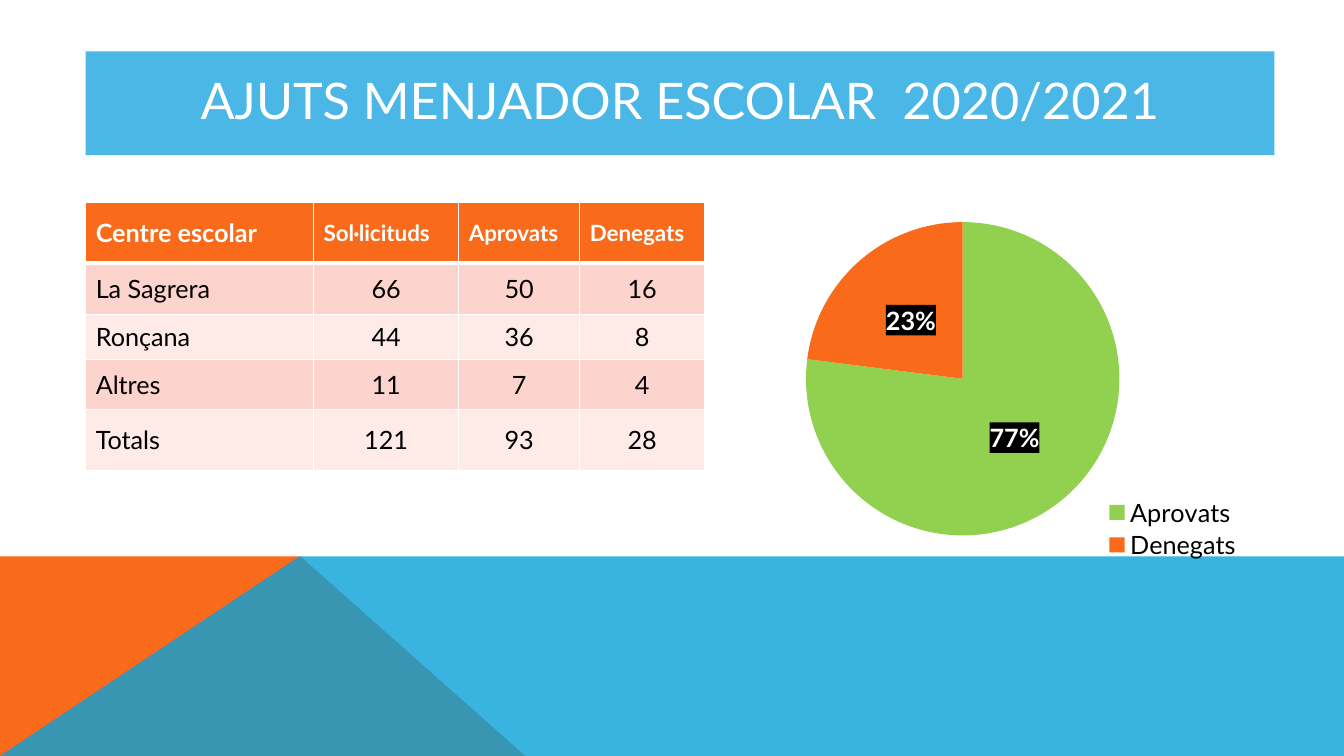
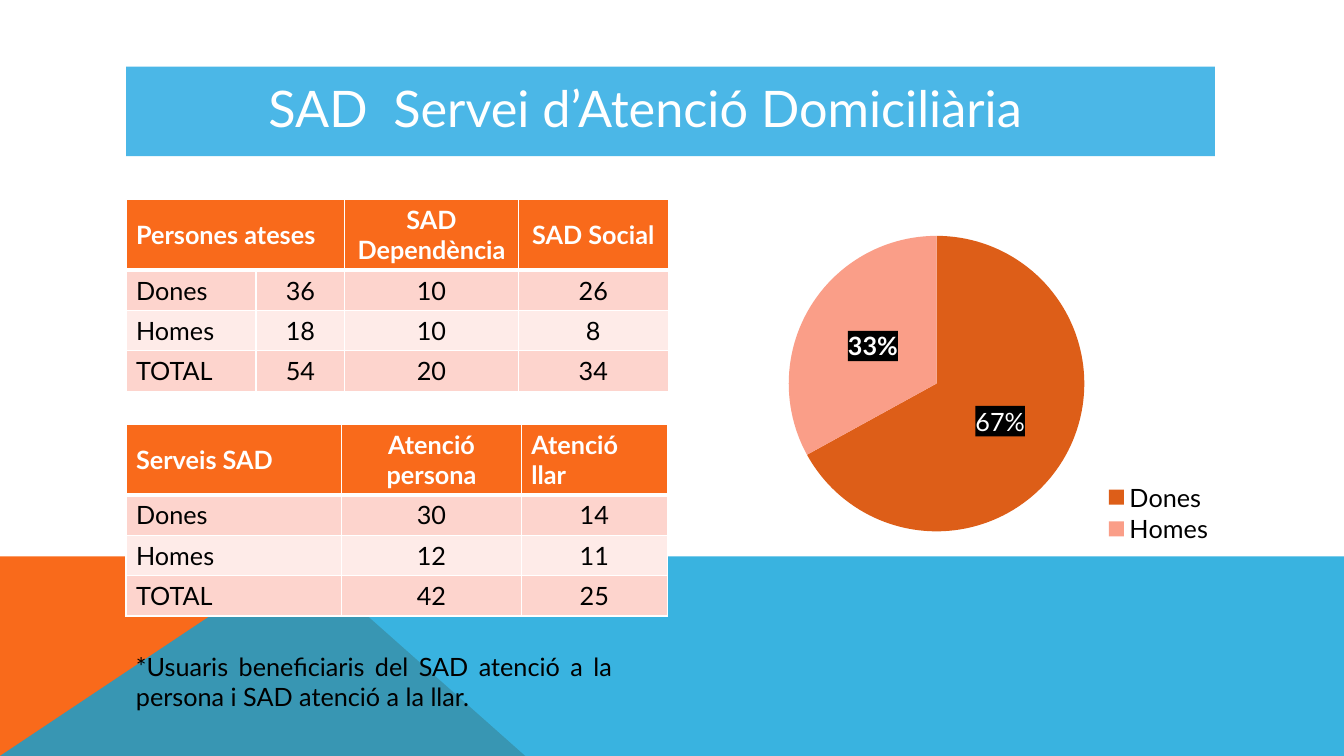
from dataclasses import dataclass

from pptx import Presentation
from pptx.chart.chart import Chart
from pptx.chart.data import CategoryChartData
from pptx.dml.color import RGBColor
from pptx.enum.chart import XL_CHART_TYPE as ChartType
from pptx.enum.chart import XL_LABEL_POSITION as LabelPosition
from pptx.enum.chart import XL_LEGEND_POSITION as LegendPosition
from pptx.enum.text import MSO_ANCHOR as Anchor
from pptx.enum.text import MSO_AUTO_SIZE as AutoSize
from pptx.enum.text import PP_ALIGN as Align
from pptx.oxml import parse_xml
from pptx.oxml.ns import nsdecls, qn
from pptx.slide import Slide
from pptx.util import Inches, Pt

WHITE = RGBColor(0xFF, 0xFF, 0xFF)
BLACK = RGBColor(0x00, 0x00, 0x00)
ORANGE = RGBColor(0xF9, 0x6A, 0x1B)
DARK_ORANGE = RGBColor(0xDD, 0x5E, 0x18)
SALMON = RGBColor(0xFA, 0x9E, 0x88)
GREEN = RGBColor(0x92, 0xD0, 0x50)
BLUE = RGBColor(0x08, 0xA1, 0xD9)
TITLE_BLUE = RGBColor(0x4B, 0xB7, 0xE7)
ROW_TINTS = (RGBColor(0xFD, 0xD4, 0xCD), RGBColor(0xFE, 0xEB, 0xE8))

FONT = "Lato"
BODY_SIZE = 18
WIDTH, HEIGHT = 13.33, 7.5
BAND_TOP = 5.52

Box = tuple[float, float, float, float]


@dataclass(frozen=True)
class Band:
    points: tuple[tuple[float, float], ...]
    color: RGBColor
    opacity: int = 100


@dataclass(frozen=True)
class Column:
    width: float
    title: str = ""  # an untitled column joins the header on its left
    align: Align = Align.CENTER
    size: int = BODY_SIZE


@dataclass(frozen=True)
class TableSpec:
    left: float
    top: float
    columns: tuple[Column, ...]
    heights: tuple[float, ...]
    rows: tuple[tuple[str, ...], ...]


@dataclass(frozen=True)
class PieSpec:
    box: Box
    plot: Box
    legend: Box
    shares: dict[str, int]
    colors: tuple[RGBColor, ...]
    plain_label: str = ""  # lighter text for the first slice


@dataclass(frozen=True)
class SlideSpec:
    title: str
    title_box: Box
    tables: tuple[TableSpec, ...]
    pie: PieSpec
    title_shift: float = 0
    note: str = ""
    note_box: Box = (1.25, 6.41, 4.92, 0.71)


BANDS = (
    Band(((0, HEIGHT), (0, BAND_TOP), (2.98, BAND_TOP), (5.21, HEIGHT)), ORANGE),
    Band(((0, HEIGHT), (2.97, BAND_TOP), (WIDTH, BAND_TOP), (WIDTH, HEIGHT)), BLUE, 80),
)

SLIDES = (
    SlideSpec(
        title="AJUTS MENJADOR ESCOLAR  2020/2021",
        title_box=(0.85, 0.51, 11.79, 1.03),
        tables=(
            TableSpec(
                0.85, 2.01,
                (Column(2.26, "Centre escolar", Align.LEFT),
                 Column(1.44, "Sol·licituds", Align.LEFT, 16),
                 Column(1.2, "Aprovats", Align.LEFT, 16),
                 Column(1.24, "Denegats", Align.LEFT, 16)),
                (0.6, 0.51, 0.45, 0.49, 0.61),
                (("La Sagrera", "66", "50", "16"),
                 ("Ronçana", "44", "36", "8"),
                 ("Altres", "11", "7", "4"),
                 ("Totals", "121", "93", "28")),
            ),
        ),
        pie=PieSpec(
            box=(6.57, 1.54, 6.06, 4.75),
            plot=(0.235, 0.139, 0.513, 0.656),
            legend=(0.72, 0.71, 0.23, 0.14),
            shares={"Aprovats": 77, "Denegats": 23},
            colors=(GREEN, ORANGE),
        ),
    ),
    SlideSpec(
        title="SAD  Servei d’Atenció Domiciliària",
        title_box=(1.25, 0.66, 10.8, 0.89),
        title_shift=0.5,
        tables=(
            TableSpec(
                1.25, 1.98,
                (Column(1.29, "Persones ateses", Align.LEFT), Column(0.88),
                 Column(1.72, "SAD Dependència"), Column(1.49, "SAD Social")),
                (0.69, 0.4, 0.4, 0.4),
                (("Dones", "36", "10", "26"),
                 ("Homes", "18", "10", "8"),
                 ("TOTAL", "54", "20", "34")),
            ),
            TableSpec(
                1.25, 4.21,
                (Column(2.14, "Serveis SAD", Align.LEFT),
                 Column(1.78, "Atenció persona"),
                 Column(1.45, "Atenció llar", Align.LEFT)),
                (0.7, 0.4, 0.4, 0.4),
                (("Dones", "30", "14"),
                 ("Homes", "12", "11"),
                 ("TOTAL", "42", "25")),
            ),
        ),
        pie=PieSpec(
            box=(6.65, 1.26, 5.43, 4.28),
            plot=(0.216, 0.238, 0.54, 0.714),
            legend=(0.79, 0.82, 0.21, 0.15),
            shares={"Dones": 67, "Homes": 33},
            colors=(DARK_ORANGE, SALMON),
            plain_label="67%",
        ),
        note="*Usuaris beneficiaris del SAD atenció a la persona i SAD atenció a la llar.",
    ),
)


def style_font(font, *, size: int = BODY_SIZE, color: RGBColor = BLACK, bold: bool = False) -> None:
    font.name, font.size, font.bold = FONT, Pt(size), bold
    font.color.rgb = color


def write(frame, text: str, *, align: Align = Align.LEFT, spacing: float = 1.0, **font_style) -> None:
    para = frame.paragraphs[0]
    para.alignment, para.line_spacing = align, spacing
    span = para.add_run()
    span.text = text
    style_font(span.font, **font_style)


def add_bands(slide: Slide, master) -> None:
    """Draw the bottom bands and hand them to the master behind everything."""
    for index, band in enumerate(BANDS):
        start, *others = [(Inches(x), Inches(y)) for x, y in band.points]
        builder = slide.shapes.build_freeform(*start)
        builder.add_line_segments(others, close=True)
        shape = builder.convert_to_shape()
        shape.shadow.inherit = False
        shape.line.fill.background()
        shape.fill.solid()
        shape.fill.fore_color.rgb = band.color
        if band.opacity < 100:
            color = next(shape.element.iter(qn("a:srgbClr")))
            color.append(parse_xml(f'<a:alpha {nsdecls("a")} val="{band.opacity * 1000}"/>'))
        master.shapes.element.insert(2 + index, shape.element)


def add_title(slide: Slide, spec: SlideSpec) -> None:
    title = slide.shapes.title
    title.left, title.top, title.width, title.height = map(Inches, spec.title_box)
    title.fill.solid()
    title.fill.fore_color.rgb = TITLE_BLUE
    frame = title.text_frame
    frame.word_wrap, frame.auto_size = True, AutoSize.NONE
    frame.vertical_anchor = Anchor.MIDDLE
    frame.margin_right = Inches(0.1 + spec.title_shift)
    write(frame, spec.title, align=Align.CENTER, spacing=0.9, size=36, color=WHITE)


def set_borders(cell, *, top: int, bottom: int) -> None:
    properties = cell._tc.get_or_add_tcPr()
    widths = {"lnL": 1, "lnR": 1, "lnT": top, "lnB": bottom}
    for index, (tag, width) in enumerate(widths.items()):
        properties.insert(index, parse_xml(
            f'<a:{tag} {nsdecls("a")} w="{Pt(width)}"><a:solidFill>'
            f'<a:srgbClr val="{WHITE}"/></a:solidFill></a:{tag}>'))


def add_table(slide: Slide, spec: TableSpec) -> None:
    columns = spec.columns
    table = slide.shapes.add_table(
        len(spec.heights), len(columns), Inches(spec.left), Inches(spec.top),
        Inches(sum(column.width for column in columns)), Inches(sum(spec.heights)),
    ).table
    for index, column in enumerate(columns):
        table.columns[index].width = Inches(column.width)
    for index, height in enumerate(spec.heights):
        table.rows[index].height = Inches(height)

    header = tuple(column.title for column in columns)
    for row, texts in enumerate((header, *spec.rows)):
        for index, (text, column) in enumerate(zip(texts, columns)):
            cell = table.cell(row, index)
            cell.vertical_anchor = Anchor.MIDDLE
            cell.fill.solid()
            cell.fill.fore_color.rgb = ROW_TINTS[(row - 1) % 2] if row else ORANGE
            set_borders(cell, top=3 if row == 1 else 1, bottom=1 if row else 3)
            if row:
                align = Align.CENTER if index else Align.LEFT
                write(cell.text_frame, text, align=align)
            elif text:
                write(cell.text_frame, text, align=column.align, size=column.size,
                      color=WHITE, bold=True)
            else:
                table.cell(0, index - 1).merge(cell)


def set_layout(parent, index: int, box: Box, target: str = "") -> None:
    """Place a chart part by fractions of the chart's size."""
    for old in parent.findall(qn("c:layout")):
        parent.remove(old)
    sizes = "".join(f'<c:{tag} val="{value}"/>' for tag, value in zip("xywh", box))
    modes = '<c:xMode val="edge"/><c:yMode val="edge"/>'
    parent.insert(index, parse_xml(
        f'<c:layout {nsdecls("c")}><c:manualLayout>{target}{modes}{sizes}'
        '</c:manualLayout></c:layout>'))


def clear_background(chart: Chart) -> None:
    chart.element.find(qn("c:chart")).addnext(parse_xml(
        f'<c:spPr {nsdecls("c", "a")}><a:noFill/><a:ln><a:noFill/></a:ln></c:spPr>'))


def fill_labels(chart: Chart) -> None:
    """Put a black box behind every data label."""
    followers = [qn(f"c:{tag}") for tag in ("txPr", "dLblPos", "showLegendKey")]
    for label in chart.element.iter(qn("c:dLbl"), qn("c:dLbls")):
        follower = next(child for child in label if child.tag in followers)
        follower.addprevious(parse_xml(
            f'<c:spPr {nsdecls("c", "a")}><a:solidFill><a:srgbClr val="{BLACK}"/>'
            '</a:solidFill></c:spPr>'))


def add_pie(slide: Slide, spec: PieSpec) -> None:
    data = CategoryChartData()
    data.categories = list(spec.shares)
    data.add_series("Series 1", list(spec.shares.values()))
    chart = slide.shapes.add_chart(ChartType.PIE, *map(Inches, spec.box), data).chart
    chart.has_title = False
    style_font(chart.font)
    clear_background(chart)

    # Slices and their labels
    plot = chart.plots[0]
    plot.vary_by_categories = True
    series = plot.series[0]
    for index, color in enumerate(spec.colors):
        fill = series.points[index].format.fill
        fill.solid()
        fill.fore_color.rgb = color
    labels = series.data_labels
    labels.show_percentage, labels.show_value = True, False
    labels.number_format, labels.number_format_is_linked = "0%", False
    labels.position = LabelPosition.CENTER
    style_font(labels.font, color=WHITE, bold=True)
    if spec.plain_label:
        label = series.points[0].data_label
        write(label.text_frame, spec.plain_label, color=WHITE)
        label.position = LabelPosition.CENTER
    fill_labels(chart)

    # Legend and plot positions
    chart.has_legend = True
    chart.legend.position = LegendPosition.RIGHT
    chart.legend.include_in_layout = False
    style_font(chart.legend.font)
    set_layout(next(chart.element.iter(qn("c:legend"))), 1, spec.legend)
    set_layout(next(chart.element.iter(qn("c:plotArea"))), 0, spec.plot,
               '<c:layoutTarget val="inner"/>')


def add_note(slide: Slide, text: str, box: Box) -> None:
    frame = slide.shapes.add_textbox(*map(Inches, box)).text_frame
    frame.word_wrap, frame.auto_size = True, AutoSize.SHAPE_TO_FIT_TEXT
    write(frame, text, align=Align.JUSTIFY)


def main() -> None:
    deck = Presentation()
    deck.slide_width, deck.slide_height = Inches(WIDTH), Inches(HEIGHT)
    title_only = deck.slide_layouts[5]
    for number, spec in enumerate(SLIDES):
        page = deck.slides.add_slide(title_only)
        if number == 0:
            add_bands(page, deck.slide_master)
        add_title(page, spec)
        for table in spec.tables:
            add_table(page, table)
        if spec.note:
            add_note(page, spec.note, spec.note_box)
        add_pie(page, spec.pie)
    deck.save("out.pptx")


if __name__ == "__main__":
    main()
